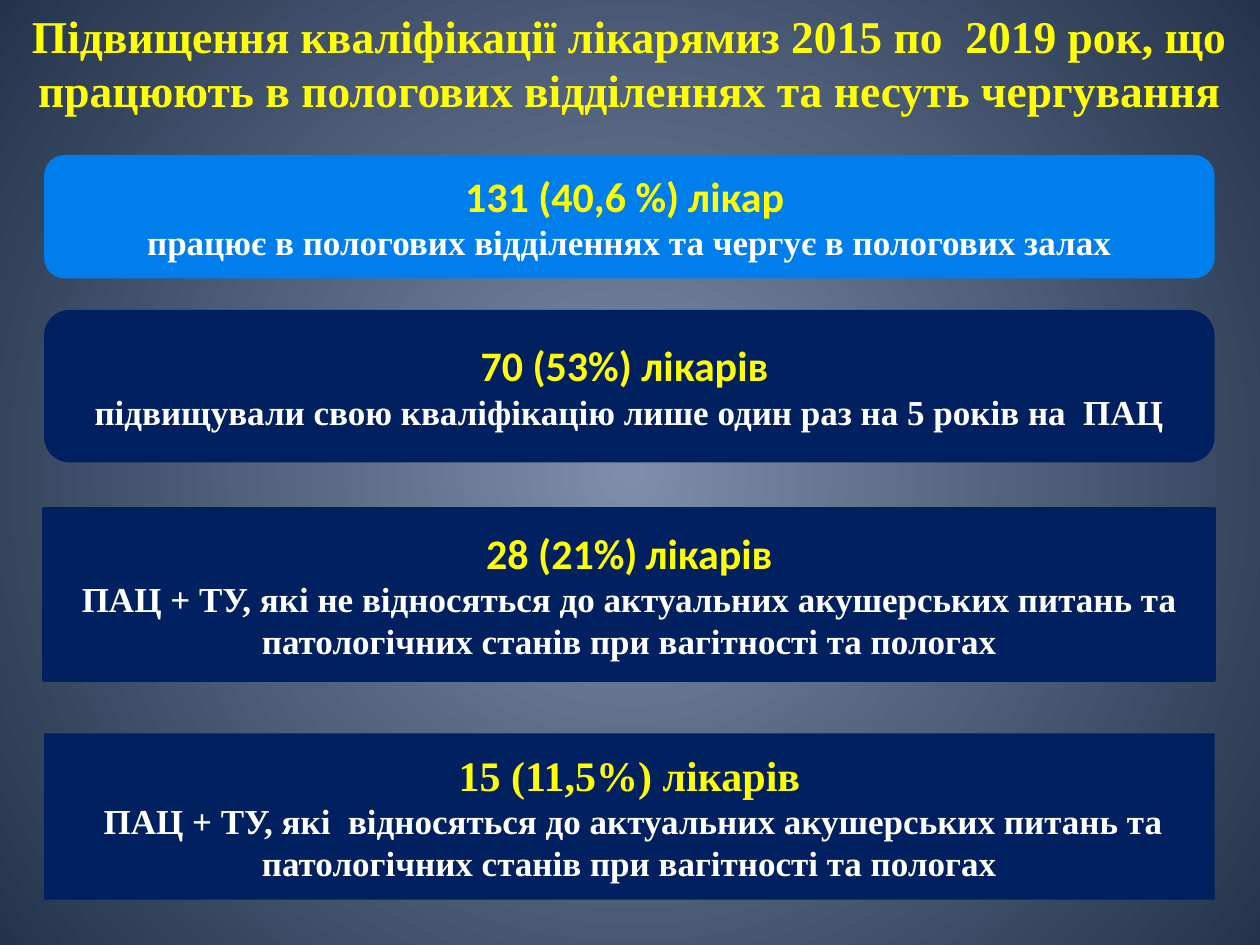
from lxml import etree
from pptx import Presentation
from pptx.dml.color import RGBColor
from pptx.enum import shapes, text
from pptx.oxml.ns import qn
from pptx.util import Inches, Pt

COLORS = {
    "glow": "7D8DAA", "edge": "24344C", "bright": "007EEB", "navy": "002060",
    "yellow": "FFFF00", "white": "FFFFFF", "black": "000000",
}
SERIF, SANS = "Times New Roman", "Calibri"

# Run styles: size, font, colour, bold
STYLES = {
    "title": (26, SERIF, "yellow", True),
    "count": (24, SANS, "yellow", True),
    "serif count": (24, SERIF, "yellow", True),
    "detail": (20, SERIF, "white", True),
    "thin gap": (20, SERIF, "white", False),
    "gap": (20, SANS, "black", True),
}

TITLE = ("Підвищення кваліфікації лікарямиз 2015 по  2019 рок, що працюють "
         "в пологових відділеннях та несуть чергування")

ROUNDED = shapes.MSO_SHAPE.ROUNDED_RECTANGLE
SQUARE = shapes.MSO_SHAPE.RECTANGLE

# Panels: outline, top, height, fill, line width, paragraphs of (text, style)
PANELS = [
    (ROUNDED, 1.23, 0.98, "bright", 0, [
        [("131 (40,6 %)", "count"), (" ", "thin gap"), ("лікар ", "count")],
        [("працює в пологових відділеннях та чергує в пологових залах", "detail")],
    ]),
    (ROUNDED, 2.46, 1.21, "navy", 0, [
        [("70 (53%) лікарів ", "count")],
        [("підвищували свою кваліфікацію лише один раз на 5 років на  ПАЦ", "detail")],
    ]),
    (SQUARE, 4.04, 1.36, "navy", 2, [
        [("28 (21%)", "count"), (" ", "gap"), ("лікарів", "count")],
        [("ПАЦ + ТУ, які не відносяться до актуальних акушерських питань та "
          "патологічних станів при вагітності та пологах", "detail")],
    ]),
    (SQUARE, 5.82, 1.32, "navy", 0, [
        [("15 (11,5%) лікарів", "serif count")],
        [(" ", "gap"),
         ("ПАЦ + ТУ, які  відносяться до актуальних акушерських питань та "
          "патологічних станів при вагітності та пологах", "detail")],
    ]),
]
PANEL_LEFT, PANEL_WIDTH = 0.35, 9.29


def rgb(name):
    return RGBColor.from_string(COLORS[name])


def write(frame, paragraphs):
    frame.word_wrap = True
    frame.auto_size = text.MSO_AUTO_SIZE.NONE
    frame.vertical_anchor = text.MSO_ANCHOR.MIDDLE
    for index, runs in enumerate(paragraphs):
        paragraph = frame.add_paragraph() if index else frame.paragraphs[0]
        paragraph.alignment = text.PP_ALIGN.CENTER
        for words, style in runs:
            run = paragraph.add_run()
            run.text = words
            size, run.font.name, color, run.font.bold = STYLES[style]
            run.font.size = Pt(size)
            run.font.color.rgb = rgb(color)


def paint_background(slide):
    fill = slide.background.fill
    fill.gradient()
    for stop, color in zip(fill.gradient_stops, ("glow", "edge")):
        stop.color.rgb = rgb(color)
    # Turn the linear gradient into a circular one around the centre
    linear = next(slide.element.iter(qn("a:lin")))
    circle = etree.Element(qn("a:path"), {"path": "circle"})
    etree.SubElement(circle, qn("a:fillToRect"), dict.fromkeys("ltrb", "50000"))
    linear.getparent().replace(linear, circle)


def add_panel(slide, outline, top, height, color, line_width, paragraphs):
    panel = slide.shapes.add_shape(outline, Inches(PANEL_LEFT), Inches(top),
                                   Inches(PANEL_WIDTH), Inches(height))
    panel.shadow.inherit = False
    panel.fill.solid()
    panel.fill.fore_color.rgb = rgb(color)
    if line_width:
        panel.line.color.rgb = rgb(color)
        panel.line.width = Pt(line_width)
    else:
        panel.line.fill.background()
    write(panel.text_frame, paragraphs)


def main():
    deck = Presentation()
    deck.slide_width, deck.slide_height = Inches(10), Inches(7.5)
    slide = deck.slides.add_slide(deck.slide_layouts[5])
    paint_background(slide)

    # Heading
    heading = slide.shapes.title
    heading.left, heading.top = Inches(0), Inches(0)
    heading.width, heading.height = deck.slide_width, Inches(0.99)
    write(heading.text_frame, [[(TITLE, "title")]])

    # Groups of doctors
    for panel in PANELS:
        add_panel(slide, *panel)

    deck.save("out.pptx")


if __name__ == "__main__":
    main()
